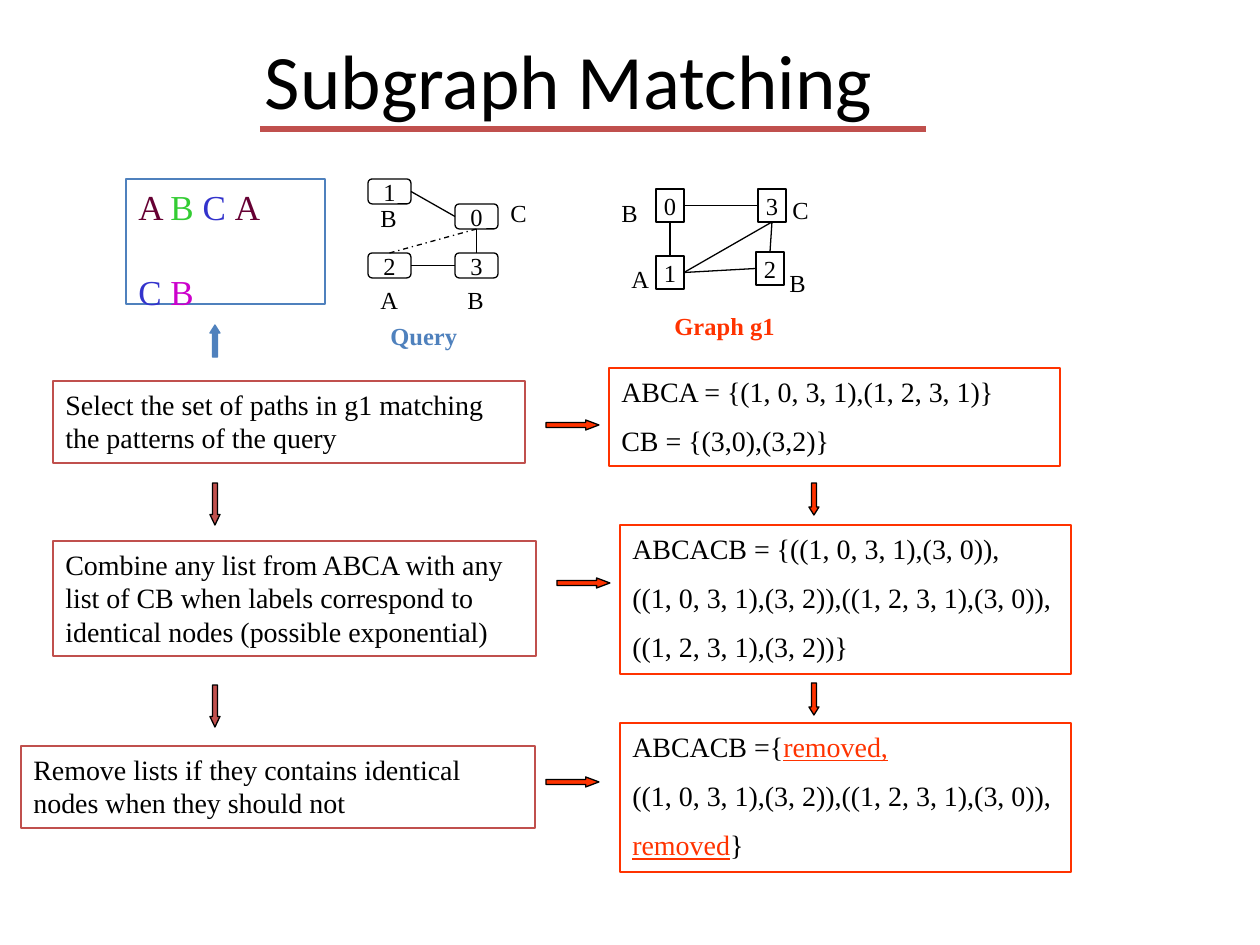
from dataclasses import dataclass

from lxml import etree
from pptx import Presentation
from pptx.dml.color import RGBColor
from pptx.enum.dml import MSO_LINE
from pptx.enum.shapes import MSO_CONNECTOR, MSO_SHAPE
from pptx.enum.text import MSO_ANCHOR, PP_ALIGN
from pptx.util import Emu, Pt

EMU_PER_PX = 914400 / 126
DRAWING_NS = "http://schemas.openxmlformats.org/drawingml/2006/main"
RECT, ROUNDED = MSO_SHAPE.RECTANGLE, MSO_SHAPE.ROUNDED_RECTANGLE
ARROW_RIGHT, ARROW_UP, ARROW_DOWN = (
    MSO_SHAPE.RIGHT_ARROW, MSO_SHAPE.UP_ARROW, MSO_SHAPE.DOWN_ARROW)
STRAIGHT = MSO_CONNECTOR.STRAIGHT
DASH_DOT = MSO_LINE.DASH_DOT
CENTER, MIDDLE = PP_ALIGN.CENTER, MSO_ANCHOR.MIDDLE
TOP, LEFT, BOTTOM, RIGHT = range(4)


@dataclass(frozen=True)
class Theme:
    black: str = "000000"
    blue: str = "4F81BD"
    brick: str = "C0504D"
    orange: str = "FF3300"
    plum: str = "660033"
    green: str = "33CC33"
    indigo: str = "3333CC"
    magenta: str = "CC00CC"
    heading_font: str = "Calibri"
    body_font: str = "Times New Roman"
    title_size: int = 44
    pattern_size: int = 20
    step_size: int = 16
    label_size: int = 14
    thin: float = 0.75
    thick: float = 3


THEME = Theme()


def px(*lengths):
    return [Emu(round(length * EMU_PER_PX)) for length in lengths]


def style_run(run, size, color=THEME.black, font=THEME.body_font, bold=False):
    run.font.size = Pt(size)
    run.font.name = font
    run.font.bold = bold
    run.font.color.rgb = RGBColor.from_string(color)


def add_outline(slide, kind, box, color):
    shape = slide.shapes.add_shape(kind, *px(*box))
    shape.shadow.inherit = False
    shape.fill.background()
    shape.line.color.rgb = RGBColor.from_string(color)
    shape.line.width = Pt(THEME.thin)
    return shape


def add_label(slide, text, box, size=THEME.label_size, **style):
    frame = slide.shapes.add_textbox(*px(*box)).text_frame
    frame.word_wrap = True
    frame.text = text
    style_run(frame.paragraphs[0].runs[0], size, **style)
    return frame


def add_title(slide, text):
    frame = add_label(slide, text, (0, 0, 1155, 158), THEME.title_size,
                      font=THEME.heading_font)
    frame.vertical_anchor = MIDDLE
    frame.paragraphs[0].alignment = CENTER
    add_line(slide, (260, 129, 926, 129), THEME.brick, THEME.thick)


def add_line(slide, ends, color=THEME.black, width=THEME.thin):
    line = slide.shapes.add_connector(STRAIGHT, *px(*ends))
    line.line.color.rgb = RGBColor.from_string(color)
    line.line.width = Pt(width)
    etree.SubElement(line._element.spPr, f"{{{DRAWING_NS}}}effectLst")
    return line


def add_node(slide, kind, number, box):
    node = add_outline(slide, kind, box, THEME.black)
    frame = node.text_frame
    frame.word_wrap = False
    frame.vertical_anchor = MIDDLE
    frame.text = number
    frame.paragraphs[0].alignment = CENTER
    style_run(frame.paragraphs[0].runs[0], THEME.label_size)
    return node


def add_graph(slide, kind, node_size, corners, edges, labels):
    """Draw numbered nodes, the edges between their sides, and vertex labels."""
    nodes = {number: add_node(slide, kind, number, corner + node_size)
             for number, corner in corners.items()}
    for start, start_side, end, end_side, dash in edges:
        edge = add_line(slide, (0, 0, 0, 0))
        edge.begin_connect(nodes[start], start_side)
        edge.end_connect(nodes[end], end_side)
        if dash:
            edge.line.dash_style = dash
    for text, left, top in labels:
        add_label(slide, text, (left, top, 38, 42))


def add_panel(slide, box, outline, paragraphs, size=THEME.step_size, gap=9):
    """Fill a bordered box; each paragraph is a list of (text, color, underline)."""
    frame = add_outline(slide, RECT, box, outline).text_frame
    frame.word_wrap = True
    frame.vertical_anchor = MSO_ANCHOR.TOP
    for index, pieces in enumerate(paragraphs):
        paragraph = frame.add_paragraph() if index else frame.paragraphs[0]
        paragraph.alignment = PP_ALIGN.LEFT
        if index:
            paragraph.space_before = Pt(gap)
        for text, color, underline in pieces:
            run = paragraph.add_run()
            run.text = text
            style_run(run, size, color)
            run.font.underline = underline


def plain(*lines):
    return [[(line, THEME.black, False)] for line in lines]


def add_arrow(slide, kind, box, color, outline=THEME.black):
    arrow = add_outline(slide, kind, box, outline)
    arrow.fill.solid()
    arrow.fill.fore_color.rgb = RGBColor.from_string(color)
    arrow.adjustments[0] = 0.5
    arrow.adjustments[1] = max(box[2:]) / min(box[2:]) / 4


def add_patterns(slide):
    t = THEME
    first = [("A ", t.plum, False), ("B ", t.green, False),
             ("C ", t.indigo, False), ("A", t.plum, False)]
    second = [("C ", t.indigo, False), ("B", t.magenta, False)]
    add_panel(slide, (126, 179, 199, 125), t.blue, [first, second],
              t.pattern_size, gap=25)
    add_arrow(slide, ARROW_UP, (210, 325, 10, 32), t.blue, t.blue)


def add_graphs(slide):
    add_graph(
        slide, ROUNDED, (43, 25),
        {"1": (368, 179), "0": (455, 204), "2": (368, 253), "3": (455, 253)},
        [("0", BOTTOM, "2", TOP, DASH_DOT), ("0", BOTTOM, "3", TOP, None),
         ("2", RIGHT, "3", LEFT, None), ("0", LEFT, "1", RIGHT, None)],
        [("B", 368, 197), ("C", 498, 192), ("A", 368, 279), ("B", 455, 279)])
    add_label(slide, "Query", (378, 315, 122, 42), color=THEME.blue, bold=True)
    add_graph(
        slide, RECT, (28, 33),
        {"0": (656, 189), "3": (758, 189), "2": (756, 252), "1": (656, 256)},
        [("0", BOTTOM, "1", TOP, None), ("3", BOTTOM, "2", TOP, None),
         ("1", RIGHT, "2", LEFT, None), ("0", RIGHT, "3", LEFT, None),
         ("1", RIGHT, "3", BOTTOM, None)],
        [("B", 609, 192), ("A", 619, 258), ("B", 777, 262), ("C", 780, 189)])
    add_label(slide, "Graph g1", (662, 305, 185, 42), color=THEME.orange, bold=True)


def add_steps(slide):
    t = THEME
    steps = [
        ((53, 381, 472, 82),
         "Select the set of paths in g1 matching the patterns of the query"),
        ((53, 541, 483, 115),
         "Combine any list from ABCA with any list of CB when labels "
         "correspond to identical nodes (possible exponential)"),
        ((21, 746, 514, 82),
         "Remove lists if they contains identical nodes when they should not"),
    ]
    for box, text in steps:
        add_panel(slide, box, t.brick, plain(text))

    middle_lists = "((1, 0, 3, 1),(3, 2)),((1, 2, 3, 1),(3, 0)),"
    results = [
        ((609, 368, 451, 98),
         plain("ABCA = {(1, 0, 3, 1),(1, 2, 3, 1)}", "CB = {(3,0),(3,2)}")),
        ((620, 525, 451, 149),
         plain("ABCACB = {((1, 0, 3, 1),(3, 0)),", middle_lists,
               "((1, 2, 3, 1),(3, 2))}")),
        ((620, 723, 451, 149),
         [[("ABCACB ={", t.black, False), ("removed,", t.orange, True)],
          *plain(middle_lists),
          [("removed", t.orange, True), ("}", t.black, False)]]),
    ]
    for box, paragraphs in results:
        add_panel(slide, box, t.orange, paragraphs)

    for left, top in ((546, 420), (557, 578), (546, 777)):
        add_arrow(slide, ARROW_RIGHT, (left, top, 53, 10), t.orange)
    for top in (483, 685):
        add_arrow(slide, ARROW_DOWN, (210, top, 10, 42), t.brick)
    for top in (483, 683):
        add_arrow(slide, ARROW_DOWN, (809, top, 10, 32), t.orange)


def main():
    prs = Presentation()
    prs.slide_width, prs.slide_height = px(1260, 945)
    slide = prs.slides.add_slide(prs.slide_layouts[6])
    add_title(slide, "Subgraph Matching ")
    add_patterns(slide)
    add_graphs(slide)
    add_steps(slide)
    prs.save("out.pptx")


if __name__ == "__main__":
    main()
